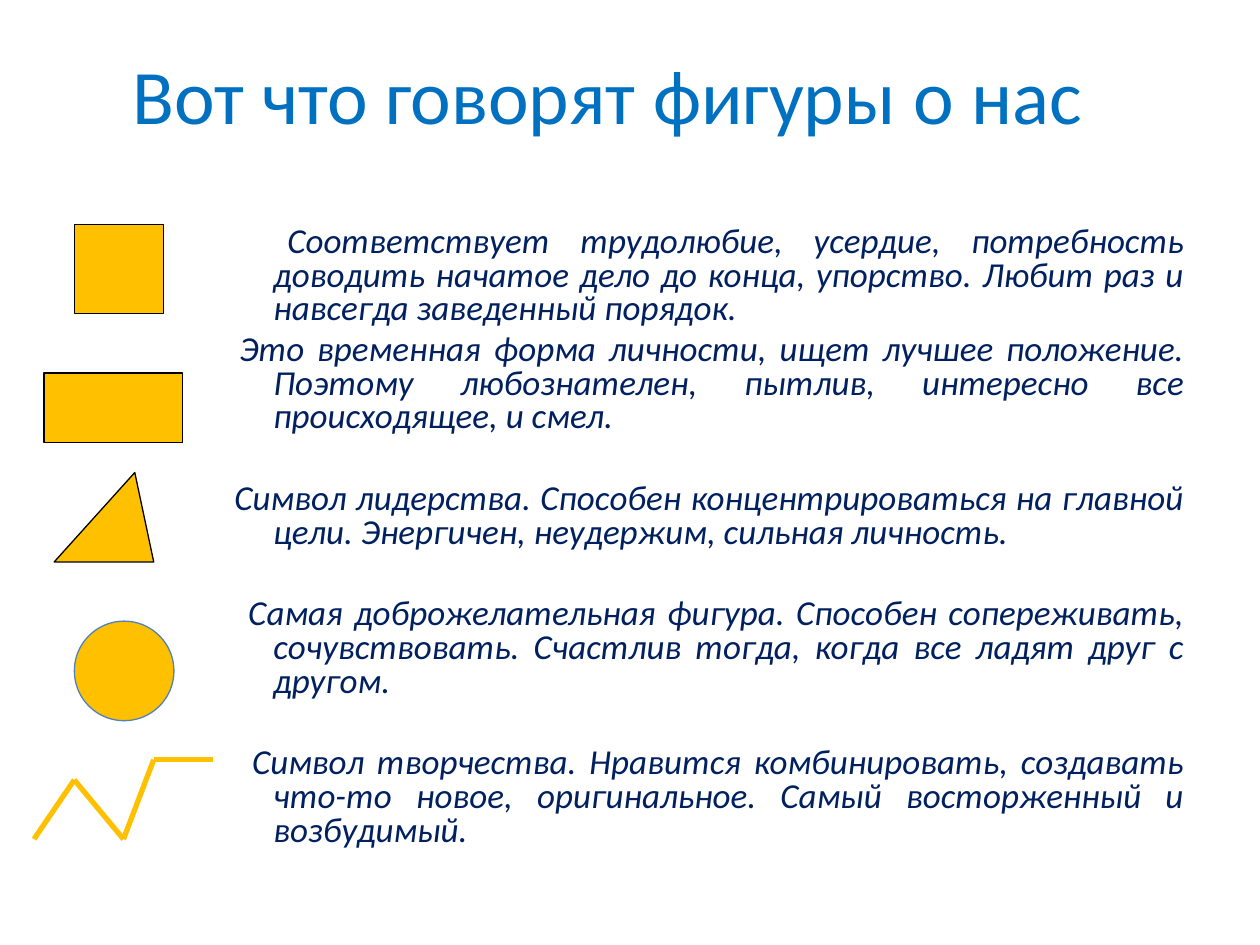
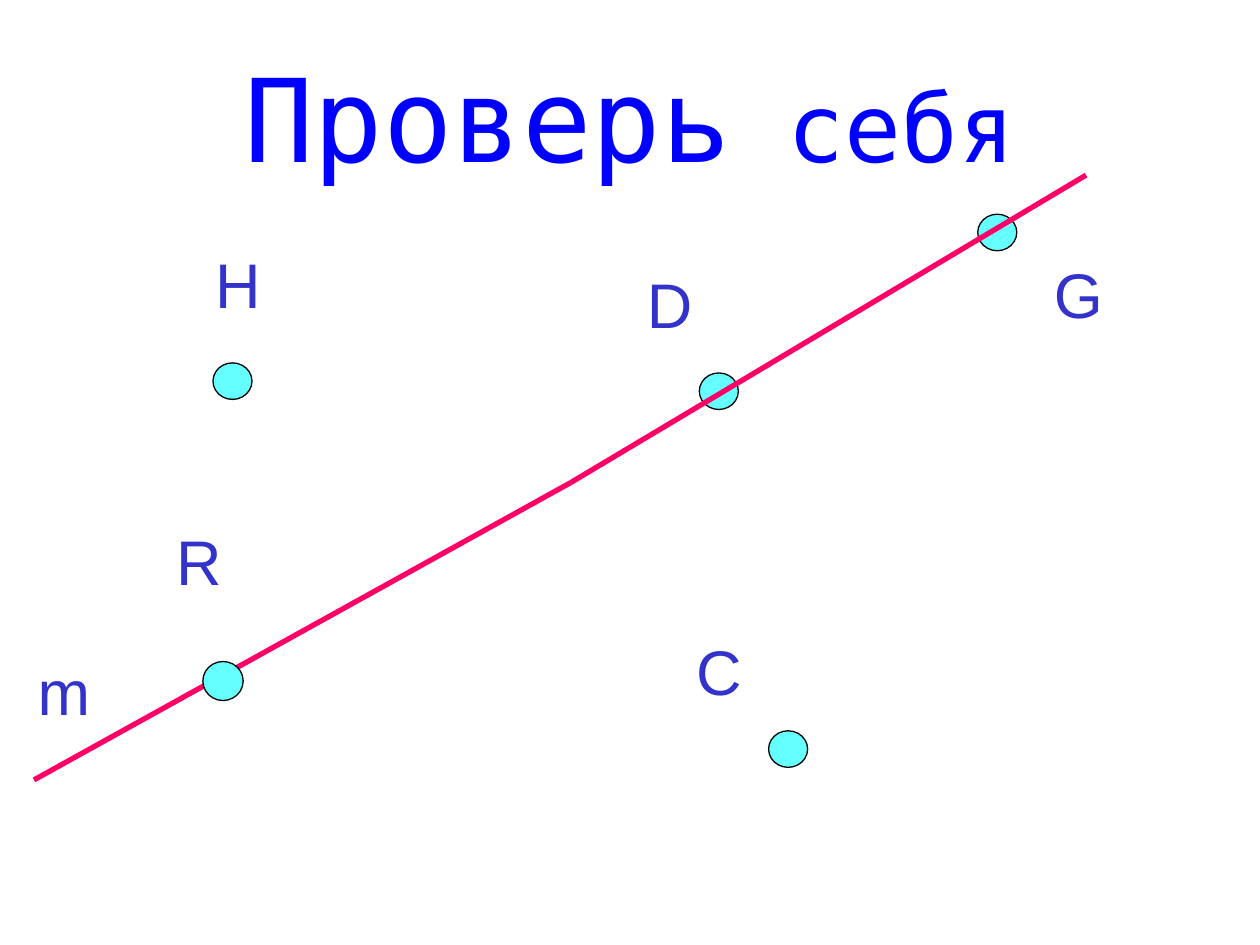
from dataclasses import dataclass
from itertools import pairwise

from lxml import etree
from pptx import Presentation
from pptx.dml.color import RGBColor
from pptx.enum.shapes import MSO_CONNECTOR, MSO_SHAPE
from pptx.enum.text import MSO_ANCHOR, MSO_AUTO_SIZE, PP_ALIGN
from pptx.oxml.ns import qn
from pptx.slide import Slide
from pptx.util import Inches, Pt

STRAIGHT = MSO_CONNECTOR.STRAIGHT
RECT, TRIANGLE, OVAL = MSO_SHAPE.RECTANGLE, MSO_SHAPE.ISOSCELES_TRIANGLE, MSO_SHAPE.OVAL
CENTER, JUSTIFY = PP_ALIGN.CENTER, PP_ALIGN.JUSTIFY
TOP, MIDDLE = MSO_ANCHOR.TOP, MSO_ANCHOR.MIDDLE
TITLE_AND_BODY, TITLE_ONLY = 1, 5

COLORS = {
    "heading": "0070C0", "body": "002060", "figure": "FFC000",
    "outline": "000000", "circle_outline": "4F81BD",
    "check_heading": "0000FF", "line": "FF0066", "point": "66FFFF", "letter": "3333CC",
}

HANGING = 0.38
TIGHT, WIDE = 4, 27.5


@dataclass(frozen=True)
class Box:
    left: float
    top: float
    width: float
    height: float

    def emu(self) -> tuple[int, int, int, int]:
        return Inches(self.left), Inches(self.top), Inches(self.width), Inches(self.height)


@dataclass(frozen=True)
class Figure:
    kind: int
    box: Box
    fill: str = "figure"
    outline: str = "outline"
    apex: float | None = None


@dataclass(frozen=True)
class Trait:
    text: str
    first_indent: float
    before: float = WIDE


@dataclass(frozen=True)
class Letter:
    text: str
    box: Box


TRAITS = [
    Trait("Соответствует трудолюбие, усердие, потребность доводить начатое дело до конца, "
          "упорство. Любит раз и навсегда заведенный порядок.", 0.11, TIGHT),
    Trait("Это временная форма личности, ищет лучшее положение. Поэтому любознателен, "
          "пытлив, интересно все происходящее, и смел.", -0.27, TIGHT),
    Trait("Символ лидерства. Способен концентрироваться на главной цели. Энергичен, "
          "неудержим, сильная личность.", -0.31),
    Trait("Самая доброжелательная фигура. Способен сопереживать, сочувствовать. Счастлив "
          "тогда, когда все ладят друг с другом.", -0.2),
    Trait("Символ творчества. Нравится комбинировать, создавать что-то новое, "
          "оригинальное. Самый восторженный и возбудимый.", -0.17),
]
FIGURES = [
    Figure(RECT, Box(0.59, 1.78, 0.71, 0.71)),
    Figure(RECT, Box(0.35, 2.96, 1.1, 0.55)),
    Figure(TRIANGLE, Box(0.43, 3.75, 0.79, 0.71), apex=0.81),
    Figure(OVAL, Box(0.59, 4.93, 0.79, 0.79), outline="circle_outline"),
]
ZIGZAG = [(0.27, 6.66), (0.59, 6.19), (0.98, 6.66), (1.22, 6.03), (1.69, 6.03)]

LINE_START, LINE_MIDDLE, LINE_END = (0.27, 6.19), (4.53, 3.83), (8.62, 1.39)
POINT_R = Box(1.61, 5.25, 0.32, 0.31)
POINTS = [POINT_R] + [
    Box(left, top, 0.31, 0.29)
    for left, top in [(5.55, 2.96), (6.1, 5.8), (7.76, 1.7), (1.69, 2.88)]
]
LETTERS = [
    Letter("m", Box(0.2, 5.09, 0.42, 0.57)),
    Letter("C", Box(5.39, 4.93, 0.63, 0.79)),
    Letter("D", Box(5, 2.02, 0.63, 0.81)),
    Letter("R", Box(1.3, 4.06, 0.47, 0.87)),
    Letter("H", Box(1.61, 1.86, 0.5, 0.91)),
    Letter("G", Box(8.23, 1.94, 0.66, 0.91)),
]


def rgb(name: str) -> RGBColor:
    return RGBColor.from_string(COLORS[name])


def place(shape, box: Box) -> None:
    shape.left, shape.top, shape.width, shape.height = box.emu()


def set_title(s: Slide, box: Box, parts: list[tuple[str, int]], font: str, color: str) -> None:
    sp = s.shapes.title
    place(sp, box)
    tf = sp.text_frame
    tf.auto_size = MSO_AUTO_SIZE.NONE
    tf.vertical_anchor = MIDDLE
    p = tf.paragraphs[0]
    p.alignment = CENTER
    p.font.name = font
    p.font.color.rgb = rgb(color)
    for text, size in parts:
        r = p.add_run()
        r.text = text
        r.font.size = Pt(size)
        r.font.name = font
        r.font.color.rgb = rgb(color)


def add_figure(s: Slide, figure: Figure) -> None:
    sp = s.shapes.add_shape(figure.kind, *figure.box.emu())
    sp.shadow.inherit = False
    sp.fill.solid()
    sp.fill.fore_color.rgb = rgb(figure.fill)
    sp.line.color.rgb = rgb(figure.outline)
    sp.line.width = Pt(0.75)
    if figure.apex is not None:
        sp.adjustments[0] = figure.apex


def add_polyline(s: Slide, points: list[tuple[float, float]], color: str) -> None:
    for start, end in pairwise(points):
        cxn = s.shapes.add_connector(STRAIGHT, *(Inches(v) for v in start + end))
        cxn.line.color.rgb = rgb(color)
        cxn.line.width = Pt(3)
        etree.SubElement(cxn._element.spPr, qn("a:effectLst"))


def add_letter(s: Slide, letter: Letter) -> None:
    tf = s.shapes.add_textbox(*letter.box.emu()).text_frame
    tf.word_wrap = False
    tf.vertical_anchor = TOP
    tf.margin_top = Inches(0.09)
    p = tf.paragraphs[0]
    p.text = letter.text
    p.alignment = CENTER
    p.font.name = "Arial"
    p.font.size = Pt(36)
    p.font.color.rgb = rgb("letter")


def fill_traits(s: Slide) -> None:
    sp = s.placeholders[1]
    place(sp, Box(1.69, 1.75, 7.81, 5.31))
    tf = sp.text_frame
    tf.auto_size = MSO_AUTO_SIZE.NONE
    for i, trait in enumerate(TRAITS):
        p = tf.add_paragraph() if i else tf.paragraphs[0]
        p.text = trait.text
        p.alignment = JUSTIFY
        p.line_spacing = 0.8
        p.space_before = Pt(trait.before)
        p.font.name = "Calibri"
        p.font.size = Pt(20)
        p.font.italic = True
        p.font.color.rgb = rgb("body")
        pPr = p._p.get_or_add_pPr()
        pPr.set("marL", str(Inches(HANGING)))
        pPr.set("indent", str(Inches(trait.first_indent)))
        pPr.insert_element_before(etree.Element(qn("a:buNone")), "a:tabLst", "a:defRPr")


def build_figures_slide(prs) -> None:
    s = prs.slides.add_slide(prs.slide_layouts[TITLE_AND_BODY])
    set_title(s, Box(0, 0.17, 9.65, 1.14), [("Вот что говорят фигуры о нас", 44)],
              "Calibri", "heading")
    fill_traits(s)
    for figure in FIGURES:
        add_figure(s, figure)
    add_polyline(s, ZIGZAG, "figure")


def build_check_slide(prs) -> None:
    s = prs.slides.add_slide(prs.slide_layouts[TITLE_ONLY])
    set_title(s, Box(0.5, 0.3, 9, 1.25), [("Проверь", 66), (" себя", 54)],
              "DejaVu Sans Mono", "check_heading")
    add_polyline(s, [LINE_START, LINE_MIDDLE], "line")
    for point in POINTS:
        add_figure(s, Figure(OVAL, point, fill="point"))
    add_polyline(s, [LINE_MIDDLE, LINE_END], "line")
    for letter in LETTERS:
        add_letter(s, letter)


def main() -> None:
    prs = Presentation()
    prs.slide_width, prs.slide_height = Inches(10), Inches(7.5)
    build_figures_slide(prs)
    build_check_slide(prs)
    prs.save("out.pptx")


if __name__ == "__main__":
    main()
